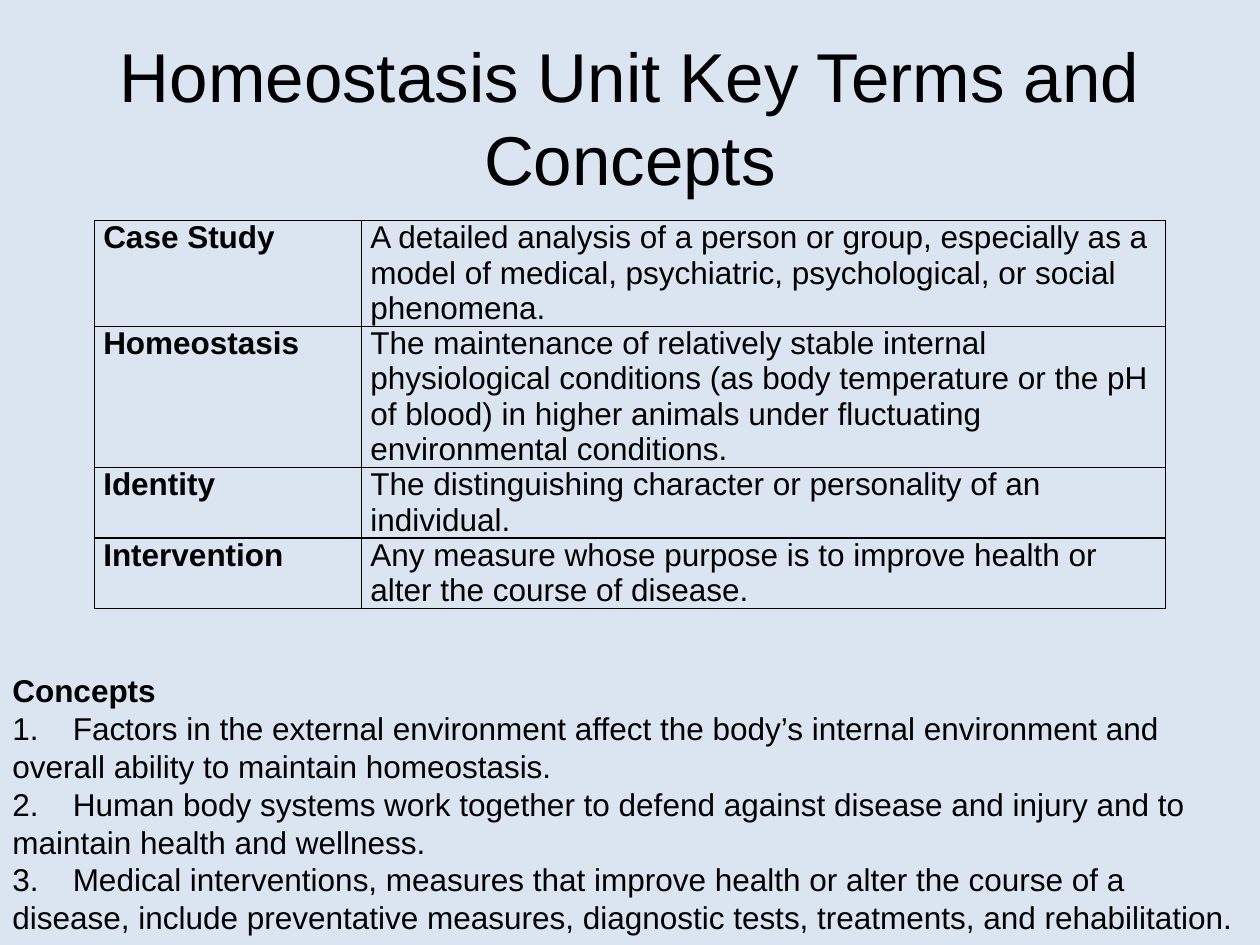
import pptx
import pptx.util
import pptx.dml.color
import pptx.enum.text
import pptx.oxml.ns
from lxml import etree

Inches, Pt = pptx.util.Inches, pptx.util.Pt
qn = pptx.oxml.ns.qn

# Content
TITLE = "Homeostasis Unit Key Terms and Concepts"
TERMS = [
    ("Case Study", "A detailed analysis of a person or group, especially as a model of "
     "medical, psychiatric, psychological, or social phenomena."),
    ("Homeostasis", "The maintenance of relatively stable internal physiological conditions "
     "(as body temperature or the pH of blood) in higher animals under fluctuating "
     "environmental conditions."),
    ("Identity", "The distinguishing character or personality of an individual."),
    ("Intervention", "Any measure whose purpose is to improve health or alter the course "
     "of disease."),
]
CONCEPTS = [
    "Factors in the external environment affect the body’s internal environment and overall "
    "ability to maintain homeostasis.",
    "Human body systems work together to defend against disease and injury and to maintain "
    "health and wellness.",
    "Medical interventions, measures that improve health or alter the course of a disease, "
    "include preventative measures, diagnostic tests, treatments, and rehabilitation.",
]
COLORS = {"background": "DAE5F1", "text": "000000", "border": "000000"}
FONT = "Arial"
COLUMN_WIDTHS = [2.12, 6.38]
LINES_PER_ROW = [3, 4, 2, 2]
LINE_HEIGHT = 0.28


def color(name):
    return pptx.dml.color.RGBColor.from_string(COLORS[name])


def format_paragraph(paragraph, size, line_spacing, bold=False):
    paragraph.line_spacing = Pt(line_spacing)
    for run in paragraph.runs:
        run.font.name = FONT
        run.font.size = Pt(size)
        run.font.bold = bold
        run.font.color.rgb = color("text")


def add_text_frame(slide, left, top, width, height):
    text_frame = slide.shapes.add_textbox(
        Inches(left), Inches(top), Inches(width), Inches(height)).text_frame
    text_frame.word_wrap = True
    return text_frame


def add_borders(cell):
    properties = cell._tc.get_or_add_tcPr()
    for position, side in enumerate(("a:lnL", "a:lnR", "a:lnT", "a:lnB")):
        line = etree.Element(qn(side), w=str(Pt(1)))
        fill = etree.SubElement(line, qn("a:solidFill"))
        etree.SubElement(fill, qn("a:srgbClr"), val=COLORS["border"])
        properties.insert(position, line)


def add_tab_stop(paragraph, position):
    tabs = etree.SubElement(paragraph._p.get_or_add_pPr(), qn("a:tabLst"))
    etree.SubElement(tabs, qn("a:tab"), pos=str(Inches(position)), algn="l")


presentation = pptx.Presentation()
presentation.slide_width, presentation.slide_height = Inches(10), Inches(7.5)
slide = presentation.slides.add_slide(presentation.slide_layouts[6])
slide.background.fill.solid()
slide.background.fill.fore_color.rgb = color("background")

# Title
title = add_text_frame(slide, 0.5, 0.3, 9, 1.25)
title.text = TITLE
title.vertical_anchor = pptx.enum.text.MSO_ANCHOR.MIDDLE
title.paragraphs[0].alignment = pptx.enum.text.PP_ALIGN.CENTER
format_paragraph(title.paragraphs[0], 39.5, 47.4)

# Table of key terms
table = slide.shapes.add_table(
    len(TERMS), len(COLUMN_WIDTHS), Inches(0.75), Inches(1.75),
    Inches(sum(COLUMN_WIDTHS)), Inches(sum(LINES_PER_ROW) * LINE_HEIGHT)).table
table.first_row = table.horz_banding = False
for column, width in zip(table.columns, COLUMN_WIDTHS):
    column.width = Inches(width)
for row, lines, entry in zip(table.rows, LINES_PER_ROW, TERMS):
    row.height = Inches(lines * LINE_HEIGHT)
    for index, (cell, text) in enumerate(zip(row.cells, entry)):
        cell.text_frame.text = text
        cell.margin_left = cell.margin_right = Inches(0.07)
        cell.margin_top = cell.margin_bottom = 0
        cell.fill.background()
        add_borders(cell)
        format_paragraph(cell.text_frame.paragraphs[0], 18, 20.1, bold=index == 0)

# Numbered concepts
concepts = add_text_frame(slide, 0, 5.28, 10, 2.22)
concepts.text = "Concepts"
format_paragraph(concepts.paragraphs[0], 18, 21.6, bold=True)
for number, text in enumerate(CONCEPTS, start=1):
    paragraph = concepts.add_paragraph()
    paragraph.text = f"{number}.\t{text}"
    format_paragraph(paragraph, 18, 21.6)
    add_tab_stop(paragraph, 0.48)

presentation.save("out.pptx")
